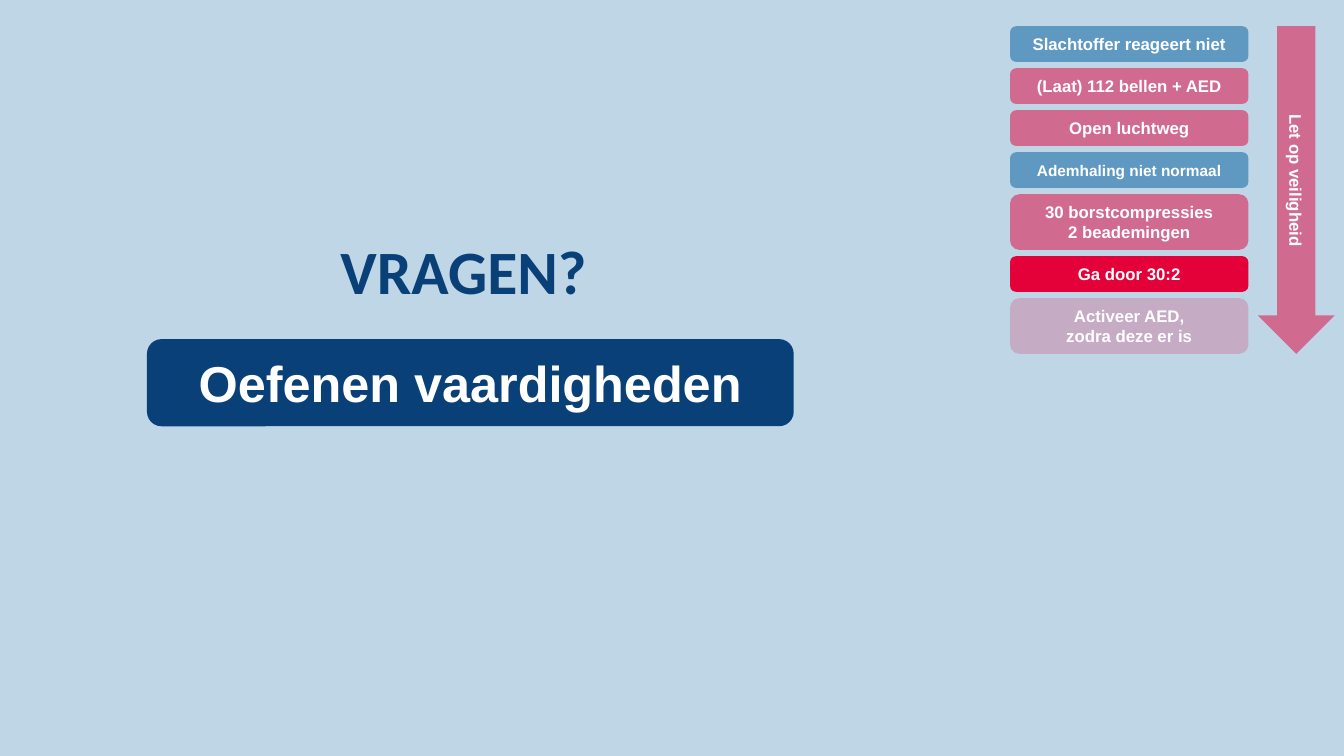
from lxml import etree
from pptx import Presentation, util as u
from pptx.dml.color import RGBColor
from pptx.enum import shapes, text
from pptx.oxml.ns import qn

PX = 9525
SKY = RGBColor(0xBF, 0xD6, 0xE7)
NAVY = RGBColor(0x08, 0x40, 0x77)
BLUE = RGBColor(0x00, 0x5D, 0x9F)
RED = RGBColor(0xE4, 0x00, 0x38)
WHITE = RGBColor(0xFF, 0xFF, 0xFF)

STEPS = [
    ("Slachtoffer reageert niet", BLUE, 50, 12),
    ("(Laat) 112 bellen + AED", RED, 50, 12),
    ("Open luchtweg", RED, 50, 12),
    ("Ademhaling niet normaal", BLUE, 50, 11),
    ("30 borstcompressies\n2 beademingen", RED, 50, 12),
    ("Ga door 30:2", RED, 100, 12),
    ("Activeer AED,\nzodra deze er is", RED, 20, 12),
]


def px(*lengths):
    return [u.Emu(n * PX) for n in lengths]


def write(sp, content, size=12, font="Arial", color=WHITE,
          anchor=text.MSO_ANCHOR.MIDDLE):
    tf = sp.text_frame
    tf.word_wrap = True
    tf.auto_size = text.MSO_AUTO_SIZE.NONE
    tf.vertical_anchor = anchor
    tf.text = content
    for p in tf.paragraphs:
        p.alignment = text.PP_ALIGN.CENTER
        for r in p.runs:
            r.font.name = font
            r.font.size = u.Pt(size)
            r.font.bold = True
            r.font.color.rgb = color


def add_block(s, kind, box, color, opacity=100):
    sp = s.shapes.add_shape(kind, *px(*box))
    sp.shadow.inherit = False
    sp.line.fill.background()
    sp.fill.solid()
    sp.fill.fore_color.rgb = color
    if opacity < 100:
        clr = sp.fill._xPr.find(".//" + qn("a:srgbClr"))
        etree.SubElement(clr, qn("a:alpha"), val=str(opacity * 1000))
    return sp


def add_protocol(s, left, top, width):
    gap, y = 6, top
    for content, color, opacity, size in STEPS:
        height = 53 if "\n" in content else 34
        sp = add_block(s, shapes.MSO_SHAPE.ROUNDED_RECTANGLE,
                       (left, y, width, height), color, opacity)
        write(sp, content, size=size)
        y += height + gap
    arrow = add_block(s, shapes.MSO_SHAPE.DOWN_ARROW,
                      (left + width + 9, top, 73, y - gap - top), RED, 50)
    write(arrow, "Let op veiligheid")
    arrow.text_frame._txBody.bodyPr.set("vert", "vert")


def add_questions(s, left, top, width):
    title = s.shapes.title
    title.left, title.top, title.width, title.height = px(left, top, width, 83)
    write(title, "VRAGEN?", size=44, font="Calibri", color=NAVY,
          anchor=text.MSO_ANCHOR.TOP)
    banner = add_block(s, shapes.MSO_SHAPE.ROUNDED_RECTANGLE,
                       (left + 94, top + 106, 616, 83), NAVY)
    write(banner, "Oefenen vaardigheden", size=36)


def main():
    prs = Presentation()
    prs.slide_width, prs.slide_height = px(1280, 720)
    s = prs.slides.add_slide(prs.slide_layouts[5])
    s.background.fill.solid()
    s.background.fill.fore_color.rgb = SKY
    add_protocol(s, 962, 25, 227)
    add_questions(s, 46, 217, 791)
    prs.save("out.pptx")


if __name__ == "__main__":
    main()
